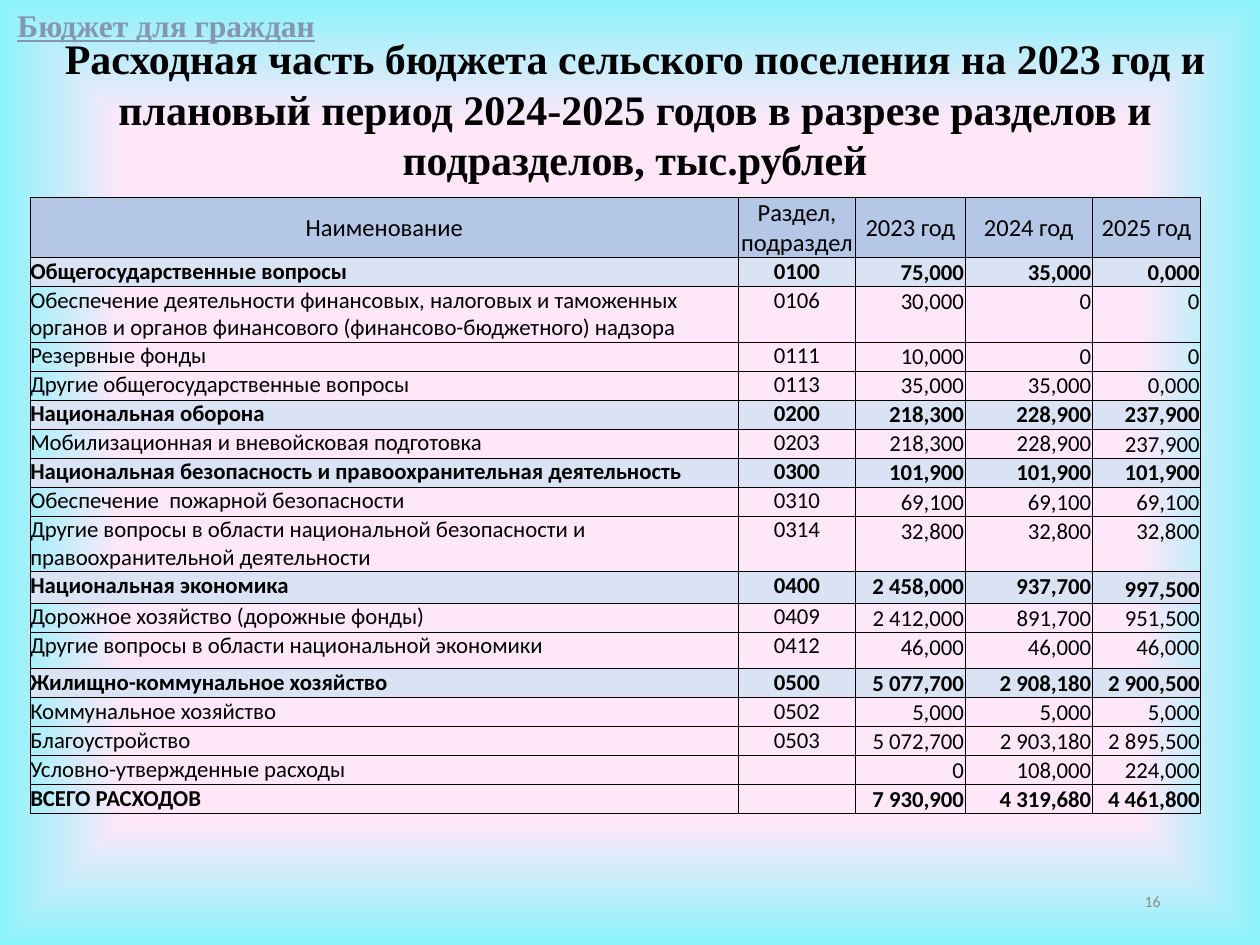
from lxml.etree import SubElement
from pptx import Presentation
from pptx.dml.color import RGBColor as RGB
from pptx.enum.text import MSO_ANCHOR as ANC, MSO_AUTO_SIZE as AUTO, PP_ALIGN as AL
from pptx.oxml import parse_xml
from pptx.oxml.ns import nsdecls, qn
from pptx.util import Inches, Pt

THEME = dict(
    title=dict(size=24, name="Times New Roman", color="000000", bold=True),
    tag=dict(size=18, name="Times New Roman", color="8497B0", bold=True, underline=True),
    number=dict(size=9, name="Calibri", color="8C8C8C", bold=False),
    head=dict(size=14, name="Calibri", color="000000", bold=False),
    group=dict(size=13, name="Calibri", color="000000", bold=True),
    item=dict(size=13, name="Calibri", color="000000", bold=False),
    head_fill="B4C7E7", group_fill="DAE3F3", border="000000",
    glow=[(74, "FFE7FA"), (100, "8BF3FB"), (100, "B5D2EC"), (100, "CEE1F2")],
)


def write(tf, text, style, align, anchor=ANC.TOP, inset=(0.1, 0.05, 0.1, 0.05), wrap=True):
    frame = dict(zip(("margin_left", "margin_top", "margin_right", "margin_bottom"),
                     map(Inches, inset)))
    for key, value in dict(frame, vertical_anchor=anchor, word_wrap=wrap).items():
        setattr(tf, key, value)
    p = tf.paragraphs[0]
    p.alignment = align
    r = p.add_run()
    r.text = text
    fmt = dict(THEME[style])
    r.font.color.rgb = RGB.from_string(fmt.pop("color"))
    for key, value in dict(fmt, size=Pt(fmt["size"])).items():
        setattr(r.font, key, value)


prs = Presentation()
prs.slide_width, prs.slide_height = Inches(10), Inches(7.5)
W, H = prs.slide_width, prs.slide_height
s = prs.slides.add_slide(prs.slide_layouts[5])

s.background.fill.solid()
solid = s.element.find(".//" + qn("p:bgPr")).find(qn("a:solidFill"))
stops = "".join(f'<a:gs pos="{pos * 1000}"><a:srgbClr val="{color}"/></a:gs>'
                for pos, color in THEME["glow"])
solid.getparent().replace(solid, parse_xml(
    f'<a:gradFill {nsdecls("a")} rotWithShape="1"><a:gsLst>{stops}</a:gsLst><a:path path="shape">'
    '<a:fillToRect l="50000" t="50000" r="50000" b="50000"/></a:path></a:gradFill>'))

title = s.shapes.title
title.left, title.top, title.width, title.height = Inches(0.04), Inches(0.18), W, Inches(1.34)
write(title.text_frame,
      "Расходная часть бюджета сельского поселения на 2023 год и плановый период 2024-2025 годов "
      "в разрезе разделов и подразделов, тыс.рублей",
      "title", AL.CENTER, inset=(0.1, 0.08, 0.1, 0.05))
title.text_frame.auto_size = AUTO.NONE

HEAD = ("Наименование", "Раздел, подраздел", "2023 год", "2024 год", "2025 год")
BUDGET = [
    ("Общегосударственные вопросы", "0100", "75,000", "35,000", "0,000"),
    ("Обеспечение деятельности финансовых, налоговых и таможенных органов и органов финансового "
     "(финансово-бюджетного) надзора", "0106", "30,000", "0", "0"),
    ("Резервные фонды", "0111", "10,000", "0", "0"),
    ("Другие общегосударственные вопросы", "0113", "35,000", "35,000", "0,000"),
    ("Национальная оборона", "0200", "218,300", "228,900", "237,900"),
    ("Мобилизационная и вневойсковая подготовка", "0203", "218,300", "228,900", "237,900"),
    ("Национальная безопасность и правоохранительная деятельность", "0300",
     "101,900", "101,900", "101,900"),
    ("Обеспечение  пожарной безопасности", "0310", "69,100", "69,100", "69,100"),
    ("Другие вопросы в области национальной безопасности и правоохранительной деятельности",
     "0314", "32,800", "32,800", "32,800"),
    ("Национальная экономика", "0400", "2 458,000", "937,700", "997,500"),
    ("Дорожное хозяйство (дорожные фонды)", "0409", "2 412,000", "891,700", "951,500"),
    ("Другие вопросы в области национальной экономики", "0412", "46,000", "46,000", "46,000"),
    ("Жилищно-коммунальное хозяйство", "0500", "5 077,700", "2 908,180", "2 900,500"),
    ("Коммунальное хозяйство", "0502", "5,000", "5,000", "5,000"),
    ("Благоустройство", "0503", "5 072,700", "2 903,180", "2 895,500"),
    ("Условно-утвержденные расходы", "", "0", "108,000", "224,000"),
    ("ВСЕГО РАСХОДОВ", "", "7 930,900", "4 319,680", "4 461,800"),
]
COLS = (5.62, 0.93, 0.87, 1.01, 0.86)
ROW = 0.23
TALL = {0: 0.47, 2: 0.43, 9: 0.44, 10: 0.25, 12: 0.29}
TOP_LAST = (2, 3, 7, 8, 9, 12)

rows = [HEAD] + BUDGET
heights = [TALL.get(i, ROW) for i in range(len(rows))]
table = s.shapes.add_table(len(rows), len(COLS), Inches(0.24), Inches(1.57),
                           Inches(sum(COLS)), Inches(sum(heights))).table
table.first_row = table.horz_banding = False
for col, width in zip(table.columns, COLS):
    col.width = Inches(width)
for i, (values, height) in enumerate(zip(rows, heights)):
    table.rows[i].height = Inches(height)
    group = values[1].endswith("00")
    style = "head" if i == 0 else "group" if group or i == len(BUDGET) else "item"
    fill = THEME["head_fill"] if i == 0 else THEME["group_fill"] if group else None
    for j, text in enumerate(values):
        cell = table.cell(i, j)
        align = AL.CENTER if i == 0 or j == 1 else AL.LEFT if j == 0 else AL.RIGHT
        low = i and j == len(COLS) - 1 and i not in TOP_LAST
        anchor = ANC.MIDDLE if i == 0 else ANC.BOTTOM if low else ANC.TOP
        inset = (0.01, 0.01, 0.01, 0) if i and j > 1 else (0, 0, 0, 0)
        if text:
            write(cell.text_frame, text, style, align, inset=inset)
        else:
            SubElement(cell.text_frame.paragraphs[0]._p, qn("a:endParaRPr"),
                       sz=str(THEME[style]["size"] * 100))
        cell.vertical_anchor = anchor
        for side, value in zip(("left", "top", "right", "bottom"), inset):
            setattr(cell, "margin_" + side, Inches(value))
        tcPr = cell._tc.get_or_add_tcPr()
        for edge in ("a:lnL", "a:lnR", "a:lnT", "a:lnB"):
            ln = SubElement(tcPr, qn(edge), w=str(Pt(0.5)))
            SubElement(SubElement(ln, qn("a:solidFill")), qn("a:srgbClr"), val=THEME["border"])
        if fill:
            cell.fill.solid()
            cell.fill.fore_color.rgb = RGB.from_string(fill)
        else:
            cell.fill.background()

number = s.shapes.add_textbox(Inches(7.06), Inches(6.95), Inches(2.25), Inches(0.4))
write(number.text_frame, "16", "number", AL.RIGHT, ANC.MIDDLE)
tag = s.shapes.add_textbox(Inches(0.04), 0, Inches(2.59), Inches(0.4))
write(tag.text_frame, "Бюджет для граждан", "tag", AL.LEFT, wrap=False)

prs.save("out.pptx")
